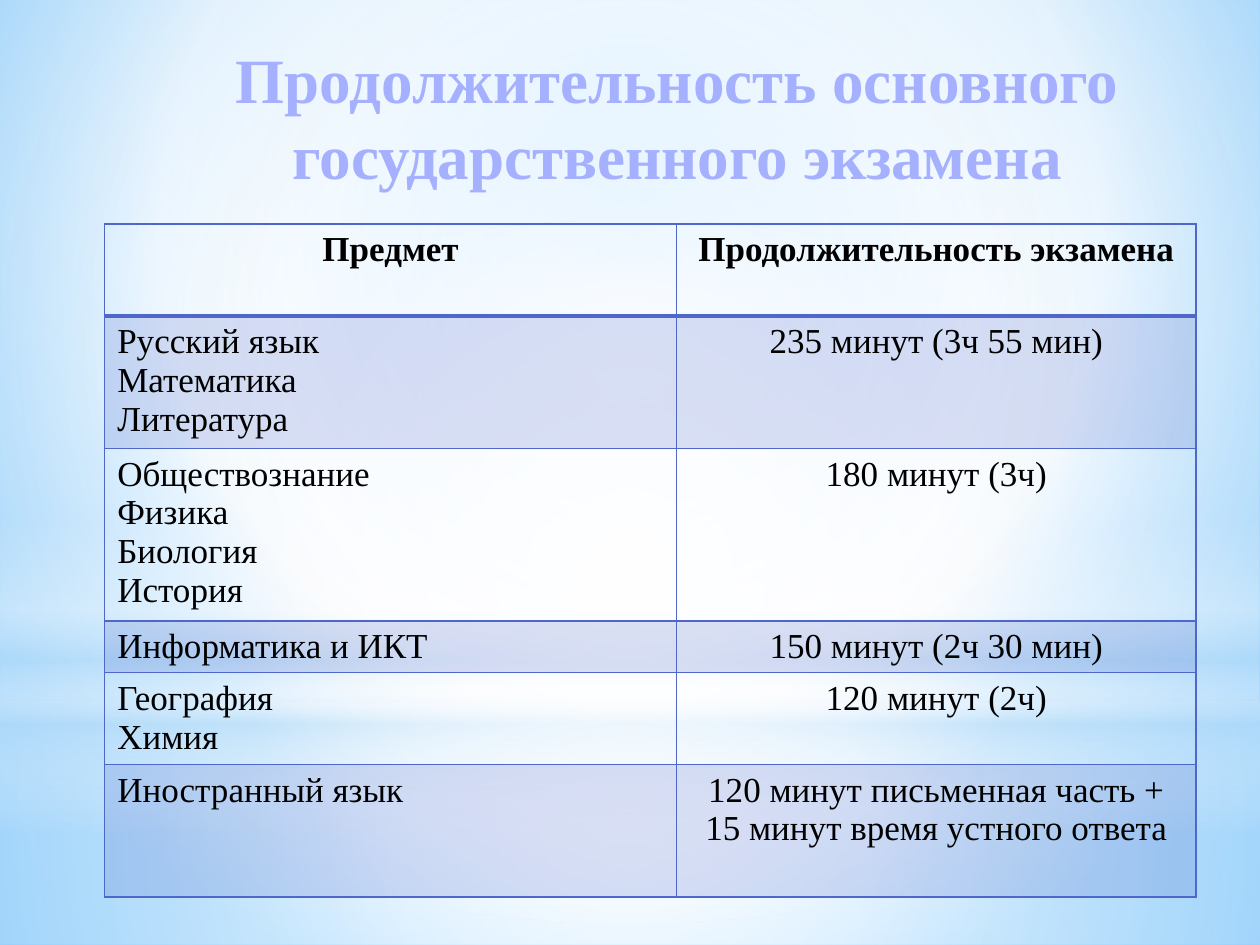
from lxml.etree import SubElement as Sub
from pptx import Presentation
from pptx.dml.color import RGBColor
from pptx.enum.shapes import MSO_SHAPE as Kind
from pptx.enum.text import MSO_ANCHOR as Anchor, PP_ALIGN as Align
from pptx.oxml import parse_xml
from pptx.oxml.ns import nsdecls, qn
from pptx.util import Cm, Pt

BLACK = RGBColor(0x00, 0x00, 0x00)
WHITE = RGBColor(0xFF, 0xFF, 0xFF)
INDIGO = RGBColor(0x4E, 0x67, 0xC8)
SKY = RGBColor(0x9E, 0xD5, 0xFF)
AZURE = RGBColor(0x5B, 0xB9, 0xFF)
MIST = RGBColor(0xB4, 0xDC, 0xFA)
LILAC = RGBColor(0xA5, 0xB0, 0xFF)
PALE = RGBColor(0xBC, 0xC4, 0xFF)
NAVY = RGBColor(0x00, 0x1C, 0x8A)

FONT = "Times New Roman"
MIDDLE = (50, 50, 50, 50)

TITLE = "Продолжительность основного государственного экзамена"
HEAD = ("Предмет", "Продолжительность экзамена")
EXAMS = [
    (["Русский язык", "Математика", "Литература"], "235 минут (3ч 55 мин)"),
    (["Обществознание", "Физика", "Биология", "История"], "180 минут (3ч)"),
    (["Информатика и ИКТ"], "150 минут (2ч 30 мин)"),
    (["География", "Химия"], "120 минут (2ч)"),
    (["Иностранный язык"],
     "120 минут письменная часть + 15 минут время устного ответа"),
]
COLS = (11.53, 10.47)
ROWS = (1.85, 2.67, 3.48, 1.04, 1.85, 2.67)


def tint(parent, color, alpha=100):
    node = Sub(parent, qn("a:srgbClr"), val=str(color))
    if alpha < 100:
        Sub(node, qn("a:alpha"), val=str(alpha * 1000))


def blend(fill, owner, stops, focus=None):
    """Give fill a gradient: round about focus, or downward without one."""
    fill.background()
    blank = owner.find(".//" + qn("a:noFill"))
    grad = parse_xml(f'<a:gradFill {nsdecls("a")} rotWithShape="1"/>')
    group = Sub(grad, qn("a:gsLst"))
    for pos, *shade in stops:
        tint(Sub(group, qn("a:gs"), pos=str(pos * 1000)), *shade)
    if focus:
        way = Sub(grad, qn("a:path"), {"path": "circle"})
        sides = {side: str(part * 1000) for side, part in zip("ltrb", focus)}
        Sub(way, qn("a:fillToRect"), sides)
    else:
        Sub(grad, qn("a:lin"), ang="5400000", scaled="0")
    blank.getparent().replace(blank, grad)


class Deck:
    """Holds the style and the current slide."""

    def __init__(self):
        self.show = Presentation()
        self.show.slide_width, self.show.slide_height = Cm(25.4), Cm(19.05)
        self.slide = self.show.slides.add_slide(self.show.slide_layouts[5])

    def back(self, stops, focus):
        fill = self.slide.background.fill
        blend(fill, self.slide.element.find(".//" + qn("p:bg")), stops, focus)

    def glow(self, kind, top, height, stops, focus=None):
        """Add a full-width translucent shape."""
        shape = self.slide.shapes.add_shape(
            kind, 0, Cm(top), self.show.slide_width, Cm(height))
        shape.shadow.inherit = False
        blend(shape.fill, shape.element.spPr, stops, focus)
        shape.line.fill.background()

    def text(self, para, words, size, bold, align):
        para.alignment = align
        run = para.add_run()
        run.text = words
        font = run.font
        font.name, font.size, font.bold = FONT, Pt(size), bold
        font.color.rgb = BLACK
        return run

    def title(self, words, left, top, width, height, stops):
        shape = self.slide.shapes.title
        shape.left, shape.top = Cm(left), Cm(top)
        shape.width, shape.height = Cm(width), Cm(height)
        frame = shape.text_frame
        frame.word_wrap, frame.vertical_anchor = True, Anchor.MIDDLE
        run = self.text(frame.paragraphs[0], words, 36, True, Align.CENTER)
        blend(run.font.fill, run._r, stops)
        self.slide.shapes.element.append(shape.element)

    def edge(self, cell, foot):
        """Rule all four sides of a cell, with foot as the lower width."""
        props = cell._tc.get_or_add_tcPr()
        for side, wide in zip("LRTB", (1, 1, 1, foot)):
            line = Sub(props, qn("a:ln" + side), w=str(int(Pt(wide))))
            tint(Sub(line, qn("a:solidFill")), INDIGO)

    def cell(self, cell, lines, align, head, band):
        self.edge(cell, 2 if head else 1)
        if band:
            cell.fill.solid()
            cell.fill.fore_color.rgb = INDIGO
            shade = cell._tc.tcPr.find(qn("a:solidFill"))[0]
            Sub(shade, qn("a:alpha"), val="20000")
        else:
            cell.fill.background()
        frame = cell.text_frame
        for num, line in enumerate(lines):
            para = frame.add_paragraph() if num else frame.paragraphs[0]
            self.text(para, line, 20, head, align)

    def table(self, left, top, cols, rows, head, body):
        grid = self.slide.shapes.add_table(
            len(rows), len(cols), Cm(left), Cm(top),
            Cm(sum(cols)), Cm(sum(rows))).table
        grid.first_row = grid.horz_banding = False
        for col, width in zip(grid.columns, cols):
            col.width = Cm(width)
        for row, height in zip(grid.rows, rows):
            row.height = Cm(height)
        for col, name in enumerate(head):
            self.cell(grid.cell(0, col), [name], Align.CENTER, True, False)
        for row, (names, time) in enumerate(body, 1):
            band = row % 2 == 1
            self.cell(grid.cell(row, 0), names, Align.LEFT, False, band)
            self.cell(grid.cell(row, 1), [time], Align.CENTER, False, band)


def main():
    deck = Deck()
    deck.back([(0, SKY), (60, WHITE), (100, AZURE)], (20, 10, 20, 60))
    deck.glow(Kind.RECTANGLE, 14.17, 4.88,
              [(0, WHITE, 91), (37, WHITE, 76), (100, MIST, 79)], MIDDLE)
    deck.glow(Kind.RECTANGLE, 0, 14.17,
              [(0, WHITE, 89), (48, WHITE, 62), (100, MIST, 79)], MIDDLE)
    deck.glow(Kind.RECTANGLE, 10.46, 6.35,
              [(0, WHITE, 0), (29, WHITE, 30), (45, MIST, 40),
               (55, WHITE, 26), (65, MIST, 60), (100, WHITE, 0)])
    deck.glow(Kind.OVAL, 4.45, 14.17, [(0, WHITE), (56, WHITE, 0)], MIDDLE)
    deck.title(TITLE, 2.49, 0.76, 22.33, 3.18,
               [(0, PALE), (9, LILAC), (50, NAVY), (79, LILAC), (100, PALE)])
    deck.table(2.11, 4.52, COLS, ROWS, HEAD, EXAMS)
    deck.show.save("out.pptx")


if __name__ == "__main__":
    main()
